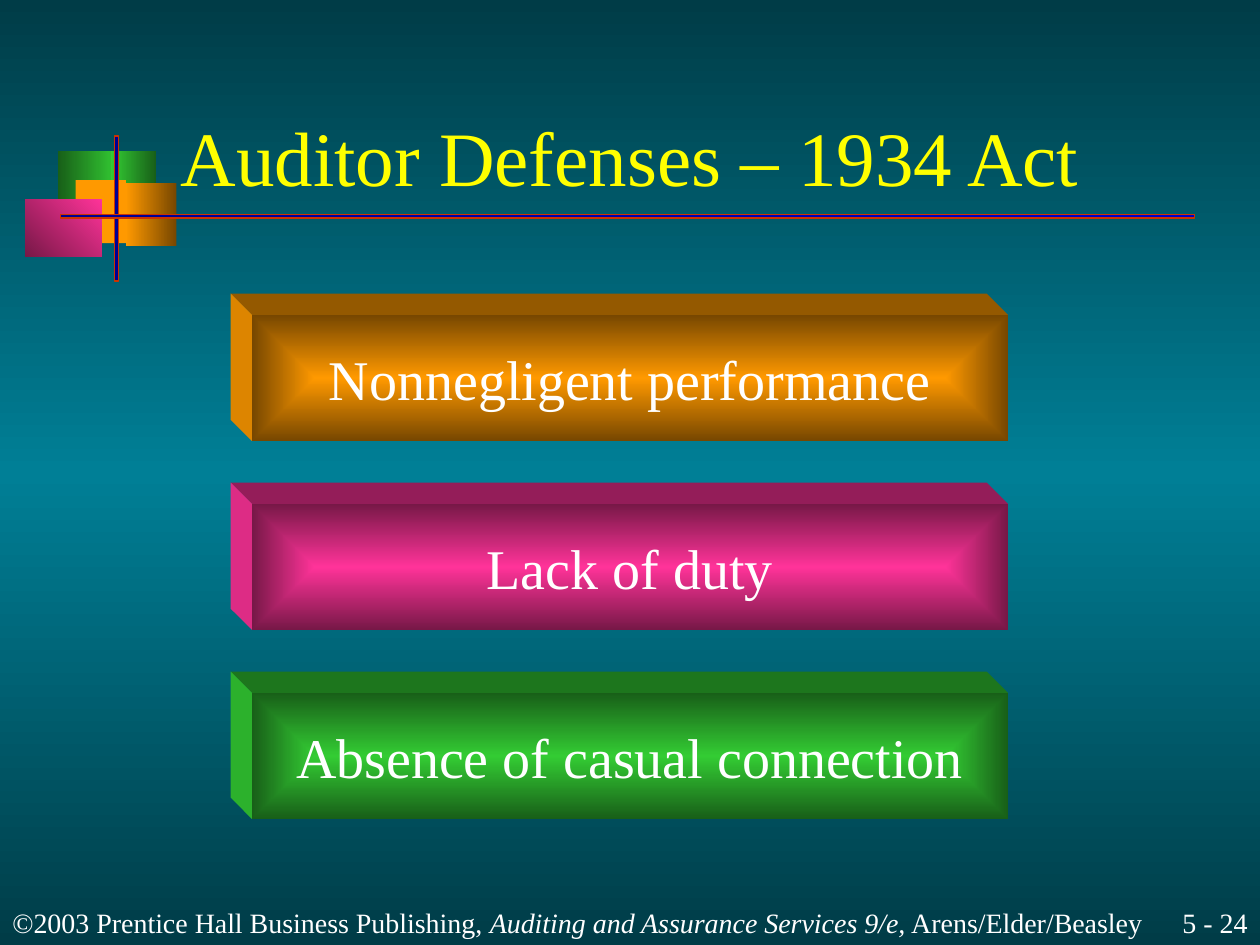
from pptx import Presentation
from pptx.dml.color import RGBColor
from pptx.enum.shapes import MSO_SHAPE
from pptx.enum.text import MSO_ANCHOR, MSO_AUTO_SIZE, PP_ALIGN
from pptx.oxml import parse_xml
from pptx.oxml.ns import nsdecls
from pptx.util import Inches, Pt


def paint(item, root, colors, angle=None):
    if len(colors) == 1:
        item.fill.solid()
        item.fill.fore_color.rgb = RGBColor.from_string(colors[0])
        return
    item.fill.gradient()
    step = 100000 // (len(colors) - 1)
    stops = "".join(f'<a:gs pos="{i * step}"><a:srgbClr val="{c}"/></a:gs>'
                    for i, c in enumerate(colors))
    if angle is None:
        way = ('<a:path path="rect"><a:fillToRect l="50000" t="50000" '
               'r="50000" b="50000"/></a:path>')
    else:
        way = f'<a:lin ang="{angle * 60000}" scaled="0"/>'
    old = root.xpath(".//a:gradFill")[0]
    old.getparent().replace(old, parse_xml(
        f'<a:gradFill {nsdecls("a")} rotWithShape="1">'
        f'<a:gsLst>{stops}</a:gsLst>{way}</a:gradFill>'))


def write(frame, parts, size, color, align, anchor, wrap):
    frame.word_wrap = wrap
    frame.auto_size = MSO_AUTO_SIZE.NONE
    frame.vertical_anchor = anchor
    para = frame.paragraphs[0]
    para.alignment = align
    for text, slant in parts:
        run = para.add_run()
        run.text = text
        run.font.name = "Times New Roman"
        run.font.size = Pt(size)
        run.font.italic = slant
        run.font.color.rgb = RGBColor.from_string(color)


prs = Presentation()
prs.slide_width, prs.slide_height = Inches(10), Inches(7.5)
slide = prs.slides.add_slide(prs.slide_layouts[5])
shapes = slide.shapes
paint(slide.background, slide._element, ["003C47", "007F96", "003C47"], 90)

decor = [
    (0.46, 1.2, 0.48, 0.52, ["185F18", "33CC33"], 0, None),
    (0.88, 1.2, 0.36, 0.52, ["33CC33", "185F18"], 0, None),
    (0.6, 1.43, 0.4, 0.5, ["FF9900"], 0, None),
    (1, 1.45, 0.4, 0.5, ["FF9900", "774700"], 0, None),
    (0.2, 1.58, 0.61, 0.46, ["771847", "FF3399"], 315, None),
    (0.91, 1.08, 0.03, 1.15, ["000094"], 0, "CC3300"),
    (0.48, 1.7, 9, 0.03, ["000094", "0000CC"], 0, "CC3300"),
]
for x, y, w, h, colors, angle, edge in decor:
    rect = shapes.add_shape(MSO_SHAPE.RECTANGLE, Inches(x), Inches(y), Inches(w), Inches(h))
    rect.shadow.inherit = False
    paint(rect, rect._element, colors, angle)
    if edge:
        rect.line.color.rgb = RGBColor.from_string(edge)
        rect.line.width = Pt(0.75)
    else:
        rect.line.fill.background()

title = shapes.title
title.left, title.top = Inches(1), Inches(0.4)
title.width, title.height = Inches(8), Inches(1.25)
write(title.text_frame, [("Auditor Defenses – 1934 Act", False)], 44, "FFFF00",
      PP_ALIGN.CENTER, MSO_ANCHOR.BOTTOM, True)

left, wide, high, deep = 2, 6, 1, 0.17
bars = [
    ("Nonnegligent performance", "FF9900", "774700", "945900", "DD8500"),
    ("Lack of duty", "FF3399", "771847", "941D59", "DD2C85"),
    ("Absence of casual connection", "33CC33", "185F18", "1D761D", "2CB12C"),
]
for i, (text, light, dark, roof, side) in enumerate(bars):
    top = 2.5 + 1.5 * i
    right, base = left + wide, top + high
    faces = [
        (roof, [(left, top), (left - deep, top - deep),
                (right - deep, top - deep), (right, top)]),
        (side, [(left, top), (left - deep, top - deep),
                (left - deep, base - deep), (left, base)]),
    ]
    for color, points in faces:
        spots = [(Inches(x), Inches(y)) for x, y in points]
        form = shapes.build_freeform(*spots[0])
        form.add_line_segments(spots[1:], close=True)
        face = form.convert_to_shape()
        face.shadow.inherit = False
        paint(face, face._element, [color])
        face.line.fill.background()
    bar = shapes.add_shape(MSO_SHAPE.RECTANGLE, Inches(left), Inches(top),
                           Inches(wide), Inches(high))
    bar.shadow.inherit = False
    paint(bar, bar._element, [light, dark])
    bar.line.fill.background()
    write(bar.text_frame, [(text, False)], 32, "FFFFFF",
          PP_ALIGN.CENTER, MSO_ANCHOR.MIDDLE, False)

credit = [
    ("©2003 Prentice Hall Business Publishing, ", False),
    ("Auditing and Assurance Services 9/e,", True),
    (" Arens/Elder/Beasley", False),
]
notes = [
    (0, 9.2, credit, PP_ALIGN.LEFT, False),
    (9, 1, [("5 - 24", False)], PP_ALIGN.RIGHT, True),
]
for x, w, parts, align, wrap in notes:
    box = shapes.add_textbox(Inches(x), Inches(7), Inches(w), Inches(0.5))
    write(box.text_frame, parts, 16, "FFFFFF", align, MSO_ANCHOR.BOTTOM, wrap)

prs.save("out.pptx")
